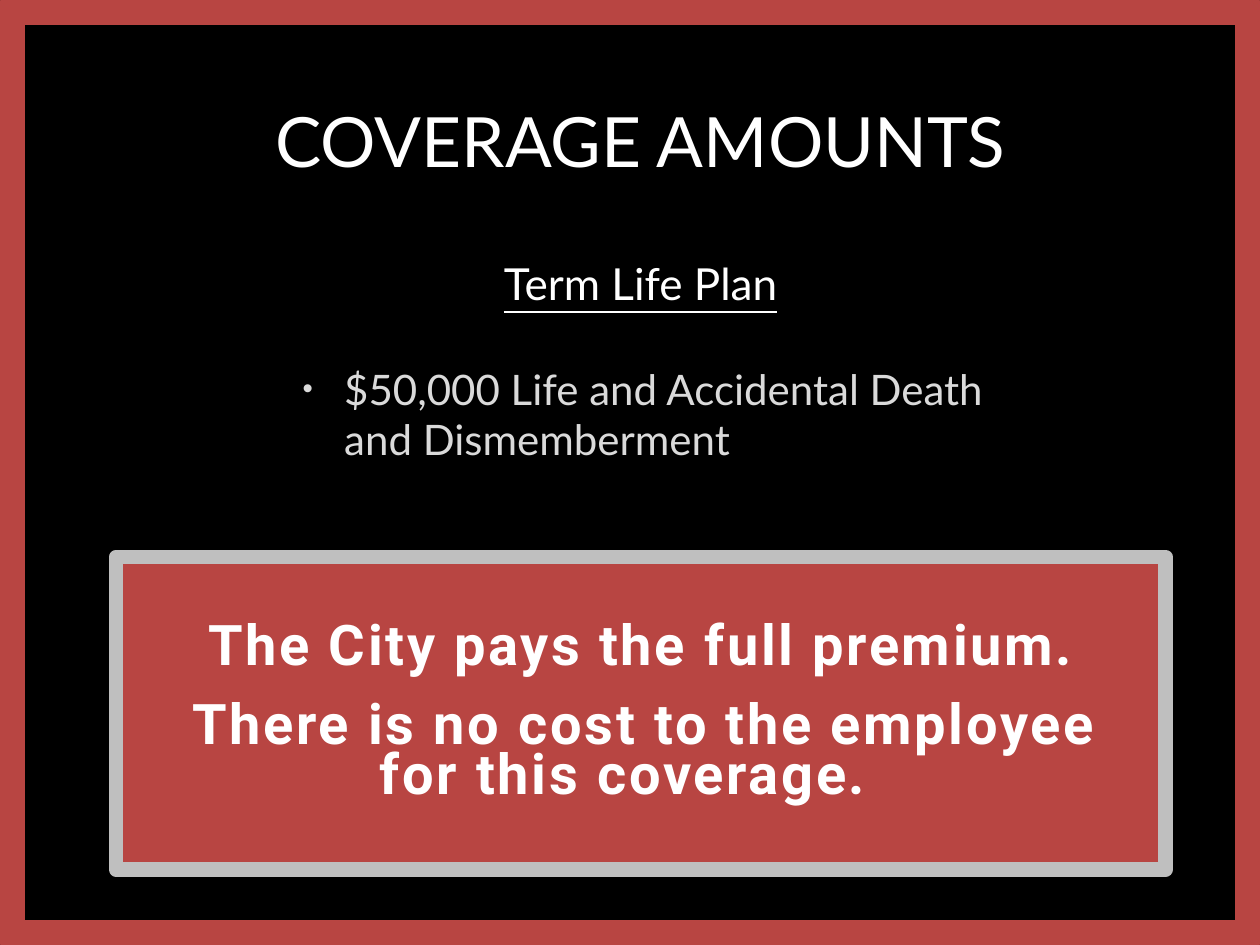
from lxml import etree
from pptx import Presentation
from pptx.dml.color import RGBColor
from pptx.enum.shapes import MSO_SHAPE
from pptx.enum.text import MSO_ANCHOR, MSO_AUTO_SIZE, PP_ALIGN
from pptx.oxml.ns import qn
from pptx.util import Cm, Pt

RECTANGLE = MSO_SHAPE.RECTANGLE
TOP = MSO_ANCHOR.TOP
NO_AUTOFIT = MSO_AUTO_SIZE.NONE
CENTER, LEFT = PP_ALIGN.CENTER, PP_ALIGN.LEFT
BLACK = RGBColor(0x00, 0x00, 0x00)
WHITE = RGBColor(0xFF, 0xFF, 0xFF)
RED = RGBColor(0xB8, 0x45, 0x42)
SILVER = RGBColor(0xBF, 0xBF, 0xBF)
PALE_GRAY = RGBColor(0xDA, 0xDA, 0xDA)


def add_run(paragraph, text, font_name, size, color, bold=False, underline=False):
    """Add one formatted run to the paragraph and return it."""
    run = paragraph.add_run()
    run.text = text
    font = run.font
    font.name, font.size, font.bold = font_name, Pt(size), bold
    font.underline = underline
    font.color.rgb = color
    return run


def set_indent(paragraph, margin, first_line):
    """Set the left margin and first-line indent of the paragraph."""
    properties = paragraph._p.get_or_add_pPr()
    properties.set("marL", str(margin))
    properties.set("indent", str(first_line))
    return properties


def prepare_text(shape, margin_top=Cm(0.13)):
    """Make the shape's text wrap from the top and return its frame."""
    frame = shape.text_frame
    frame.word_wrap = True
    frame.auto_size = NO_AUTOFIT
    frame.vertical_anchor = TOP
    frame.margin_top = margin_top
    return frame


def add_rectangle(slide, box, line_color, line_width, fill_color=None):
    """Add an outlined rectangle, filled if a fill colour is given."""
    shape = slide.shapes.add_shape(RECTANGLE, *box)
    shape.shadow.inherit = False
    if fill_color is None:
        shape.fill.background()
    else:
        shape.fill.solid()
        shape.fill.fore_color.rgb = fill_color
    shape.line.color.rgb = line_color
    shape.line.width = Pt(line_width)
    return shape


def place_title(slide, box):
    """Place the heading and the underlined plan name in the title."""
    title = slide.shapes.title
    title.left, title.top, title.width, title.height = box
    frame = prepare_text(title, Cm(1.18))
    heading = frame.paragraphs[0]
    plan = frame.add_paragraph()
    heading.alignment = plan.alignment = CENTER
    plan.space_before = Pt(43)
    add_run(heading, "COVERAGE AMOUNTS", "Lato", 39.6, WHITE)
    add_run(plan, "Term Life Plan", "Lato", 25.2, WHITE, underline=True)


def add_benefit(slide, box):
    """Add the bulleted benefit."""
    frame = prepare_text(slide.shapes.add_textbox(*box))
    paragraph = frame.paragraphs[0]
    paragraph.alignment = LEFT
    paragraph.space_after = Pt(6)
    properties = set_indent(paragraph, Cm(0.97), Cm(-0.84))
    bullet_color = etree.SubElement(properties, qn("a:buClr"))
    etree.SubElement(bullet_color, qn("a:srgbClr"), val=str(PALE_GRAY))
    etree.SubElement(properties, qn("a:buSzPct"), val="70000")
    etree.SubElement(properties, qn("a:buFont"), typeface="Arial")
    etree.SubElement(properties, qn("a:buChar"), char="•")
    add_run(paragraph, "$50,000 Life and Accidental Death and Dismemberment",
            "Lato", 24, PALE_GRAY)


def write_statement(paragraph, text, margin=Cm(0.76), first_line=Cm(-0.64)):
    """Write one centred line of widely spaced bold text."""
    paragraph.alignment = CENTER
    set_indent(paragraph, margin, first_line)
    run = add_run(paragraph, text, "Roboto", 32, WHITE, bold=True)
    run._r.get_or_add_rPr().set("spc", "150")


def add_callout(slide, box):
    """Add the premium panel with its closing line in a text box."""
    left, top, width, height = box
    panel = add_rectangle(slide, box, SILVER, 8.25, RED)
    frame = prepare_text(panel, Cm(1.05))
    write_statement(frame.paragraphs[0], "The City pays the full premium.",
                    Cm(0), Cm(-0.58))
    second = frame.add_paragraph()
    second.space_before = Pt(7)
    write_statement(second, "There is no cost to the employee")
    closing = slide.shapes.add_textbox(
        left + Cm(3.81), top + Cm(3.53), Cm(12.7), Cm(1.63))
    write_statement(prepare_text(closing).paragraphs[0], "for this coverage.")


def main():
    """Build and save the coverage slide."""
    presentation = Presentation()
    presentation.slide_width, presentation.slide_height = Cm(25.4), Cm(19.05)
    slide = presentation.slides.add_slide(presentation.slide_layouts[5])
    slide.background.fill.solid()
    slide.background.fill.fore_color.rgb = BLACK
    add_rectangle(slide, (Cm(0.21), Cm(0.21), Cm(24.98), Cm(18.63)), RED, 16.25)
    place_title(slide, (Cm(3.76), Cm(0.79), Cm(18.31), Cm(3.56)))
    add_benefit(slide, (Cm(5.72), Cm(7.19), Cm(14.4), Cm(9.7)))
    add_callout(slide, (Cm(2.34), Cm(11.23), Cm(21.16), Cm(6.3)))
    presentation.save("out.pptx")


if __name__ == "__main__":
    main()
